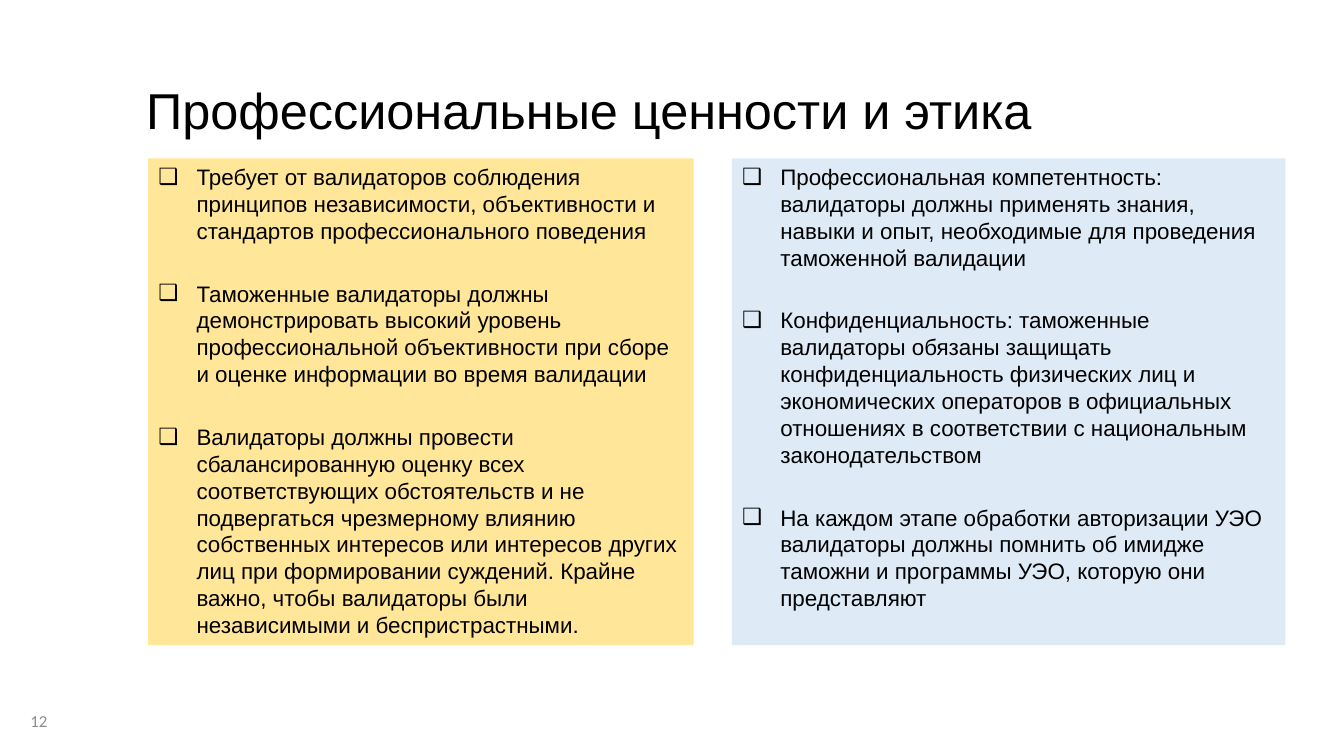
from lxml import etree
from pptx import Presentation
from pptx.dml.color import RGBColor
from pptx.enum.text import MSO_ANCHOR, MSO_AUTO_SIZE, PP_ALIGN
from pptx.oxml.ns import qn
from pptx.util import Inches, Pt

LEFT, RIGHT = PP_ALIGN.LEFT, PP_ALIGN.RIGHT
TOP, MIDDLE = MSO_ANCHOR.TOP, MSO_ANCHOR.MIDDLE
NO_AUTOFIT = MSO_AUTO_SIZE.NONE

COLORS = {"text": "000000", "number": "8C8C8C", "yellow": "FFE699", "blue": "DEEBF7"}

TITLE = "Профессиональные ценности и этика"
PRINCIPLES = [
    "Требует от валидаторов соблюдения принципов независимости, объективности и "
    "стандартов профессионального поведения",
    "Таможенные валидаторы должны демонстрировать высокий уровень профессиональной "
    "объективности при сборе и оценке информации во время валидации",
    "Валидаторы должны провести сбалансированную оценку всех соответствующих "
    "обстоятельств и не подвергаться чрезмерному влиянию собственных интересов или "
    "интересов других лиц при формировании суждений. Крайне важно, чтобы валидаторы "
    "были независимыми и беспристрастными.",
]
DUTIES = [
    "Профессиональная компетентность: валидаторы должны применять знания, навыки и "
    "опыт, необходимые для проведения таможенной валидации",
    "Конфиденциальность: таможенные валидаторы обязаны защищать конфиденциальность "
    "физических лиц и экономических операторов в официальных отношениях в "
    "соответствии с национальным законодательством",
    "На каждом этапе обработки авторизации УЭО валидаторы должны помнить об имидже "
    "таможни и программы УЭО, которую они представляют",
]


class SlideBuilder:
    def __init__(self, presentation):
        two_content_layout = presentation.slide_layouts[3]
        self.slide = presentation.slides.add_slide(two_content_layout)
        self.font_name = "Arial"
        self.indent = Inches(0.38)

    def place(self, shape, left, top, width, height, anchor):
        shape.left, shape.top = Inches(left), Inches(top)
        shape.width, shape.height = Inches(width), Inches(height)
        frame = shape.text_frame
        frame.auto_size = NO_AUTOFIT
        frame.word_wrap = True
        frame.vertical_anchor = anchor
        return frame

    def style(self, paragraph, size, color="text", alignment=LEFT, font_name=None):
        paragraph.alignment = alignment
        paragraph.font.name = font_name or self.font_name
        paragraph.font.size = Pt(size)
        paragraph.font.color.rgb = RGBColor.from_string(COLORS[color])

    def title(self, text):
        frame = self.place(self.slide.shapes.title, 1.35, 0.4, 10.88, 1.45, MIDDLE)
        frame.text = text
        paragraph = frame.paragraphs[0]
        paragraph.line_spacing = 0.9
        self.style(paragraph, 36)

    def add_bullet(self, paragraph):
        """Give the paragraph a hanging box-shaped bullet."""
        properties = paragraph._p.get_or_add_pPr()
        properties.set("marL", str(self.indent))
        properties.set("indent", str(-self.indent))
        etree.SubElement(properties, qn("a:buFont"), typeface=self.font_name)
        etree.SubElement(properties, qn("a:buChar"), char="❑")

    def bullet_panel(self, index, left, width, fill, items):
        shape = self.slide.placeholders[index]
        frame = self.place(shape, left, 1.57, width, 4.83, TOP)
        shape.fill.solid()
        shape.fill.fore_color.rgb = RGBColor.from_string(COLORS[fill])
        frame.text = "\n".join(items)
        for number, paragraph in enumerate(frame.paragraphs):
            self.add_bullet(paragraph)
            paragraph.line_spacing = Pt(19.2)
            paragraph.space_before = Pt(25.6 if number else 0)
            self.style(paragraph, 16)

    def slide_number(self, text):
        shape = self.slide.shapes.add_textbox(0, 0, 0, 0)
        frame = self.place(shape, 0.07, 6.95, 0.5, 0.4, MIDDLE)
        frame.text = text
        self.style(frame.paragraphs[0], 12, "number", RIGHT, "Calibri")


def main():
    presentation = Presentation()
    presentation.slide_width = Inches(13.33)
    presentation.slide_height = Inches(7.5)
    builder = SlideBuilder(presentation)
    builder.title(TITLE)
    builder.slide_number("12")
    builder.bullet_panel(1, 1.47, 5.41, "yellow", PRINCIPLES)
    builder.bullet_panel(2, 7.26, 5.49, "blue", DUTIES)
    presentation.save("out.pptx")


if __name__ == "__main__":
    main()
